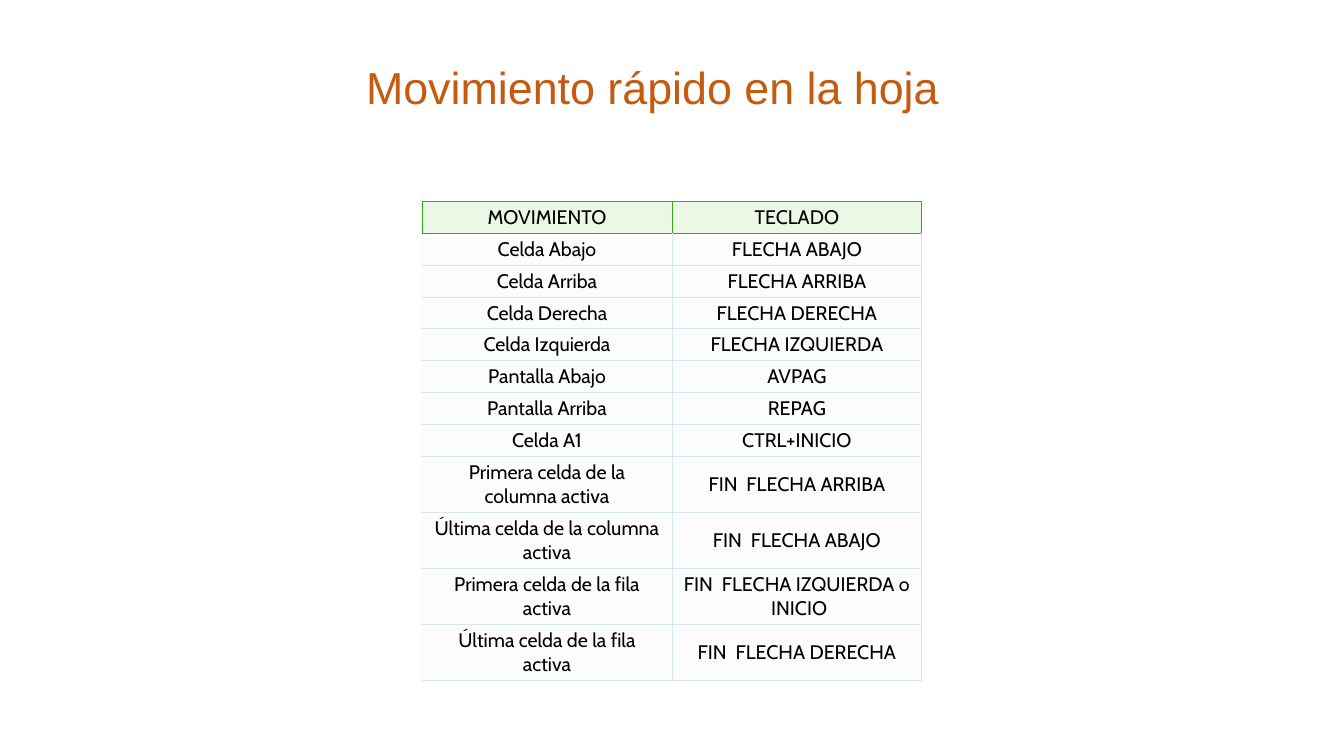
from dataclasses import dataclass

from lxml.etree import SubElement
from pptx import Presentation
from pptx.dml.color import RGBColor as Color
from pptx.enum.text import MSO_ANCHOR as Anchor, PP_ALIGN as Align
from pptx.oxml.ns import qn
from pptx.util import Pt


@dataclass(frozen=True)
class Theme:
    title_font: str = "Arial"
    table_font: str = "Cabin"
    title_size: float = 32
    table_size: float = 14
    title_color: str = "C55A11"
    text_color: str = "000000"
    header_fill: str = "EBF8E6"
    header_line: str = "32AD15"
    body_fill: str = "FCFCFC"
    body_line: str = "D6E5F5"
    line_width: float = 0.75


class SlideBuilder:
    def __init__(self, slide, theme):
        self.slide = slide
        self.theme = theme

    def set_text(self, frame, text, font, size, color):
        frame.text = text
        para = frame.paragraphs[0]
        para.alignment = Align.CENTER
        span = para.runs[0]
        span.font.name = font
        span.font.size = Pt(size)
        span.font.color.rgb = Color.from_string(color)

    def title(self, text, left, top, width, height):
        box = self.slide.shapes.add_textbox(Pt(left), Pt(top), Pt(width), Pt(height))
        box.text_frame.word_wrap = True
        theme = self.theme
        self.set_text(box.text_frame, text, theme.title_font, theme.title_size, theme.title_color)

    def borders(self, cell, colors):
        """Draw the left, right, top and bottom borders; None hides one."""
        properties = cell._tc.get_or_add_tcPr()
        for side, color in zip("LRTB", colors):
            line = SubElement(properties, qn(f"a:ln{side}"), w=str(Pt(self.theme.line_width)))
            if color:
                fill = SubElement(line, qn("a:solidFill"))
                SubElement(fill, qn("a:srgbClr"), val=color)
            else:
                SubElement(line, qn("a:noFill"))

    def cell(self, cell, text, fill, side_margin, border_colors):
        theme = self.theme
        self.borders(cell, border_colors)
        cell.fill.solid()
        cell.fill.fore_color.rgb = Color.from_string(fill)
        cell.vertical_anchor = Anchor.MIDDLE
        cell.margin_left = cell.margin_right = Pt(side_margin)
        cell.margin_top = cell.margin_bottom = Pt(2.85)
        self.set_text(cell.text_frame, text, theme.table_font, theme.table_size, theme.text_color)

    def table(self, rows, left, top, column_width, row_heights):
        columns = len(rows[0])
        frame = self.slide.shapes.add_table(
            len(rows), columns, Pt(left), Pt(top),
            Pt(column_width * columns), Pt(sum(row_heights)))
        table = frame.table
        table.horz_banding = False
        for column in table.columns:
            column.width = Pt(column_width)
        green, blue = self.theme.header_line, self.theme.body_line
        for row_index, texts in enumerate(rows):
            table.rows[row_index].height = Pt(row_heights[row_index])
            for column_index, text in enumerate(texts):
                cell = table.cell(row_index, column_index)
                if row_index == 0:
                    self.cell(cell, text, self.theme.header_fill, 5.7, [green] * 4)
                else:
                    left_line = blue if column_index else None
                    top_line = green if row_index == 1 else blue
                    self.cell(cell, text, self.theme.body_fill, 8.5,
                              [left_line, blue, top_line, blue])


SHORTCUTS = [
    ("MOVIMIENTO", "TECLADO"),
    ("Celda Abajo", "FLECHA ABAJO"),
    ("Celda Arriba", "FLECHA ARRIBA"),
    ("Celda Derecha", "FLECHA DERECHA"),
    ("Celda Izquierda", "FLECHA IZQUIERDA"),
    ("Pantalla Abajo", "AVPAG"),
    ("Pantalla Arriba", "REPAG"),
    ("Celda A1", "CTRL+INICIO"),
    ("Primera celda de la columna activa", "FIN  FLECHA ARRIBA"),
    ("Última celda de la columna activa", "FIN  FLECHA ABAJO"),
    ("Primera celda de la fila activa", "FIN  FLECHA IZQUIERDA o  INICIO"),
    ("Última celda de la fila activa", "FIN  FLECHA DERECHA"),
]


def main():
    deck = Presentation()
    deck.slide_width, deck.slide_height = Pt(960), Pt(540)
    page = SlideBuilder(deck.slides.add_slide(deck.slide_layouts[6]), Theme())

    # Shortcut table: eight one-line rows, then four two-line rows
    page.table(SHORTCUTS, 301.5, 143.8, 178.5, [22.8] * 8 + [40] * 4)

    # Title
    page.title("Movimiento rápido en la hoja", 198, 39, 536.5, 46)

    deck.save("out.pptx")


if __name__ == "__main__":
    main()
